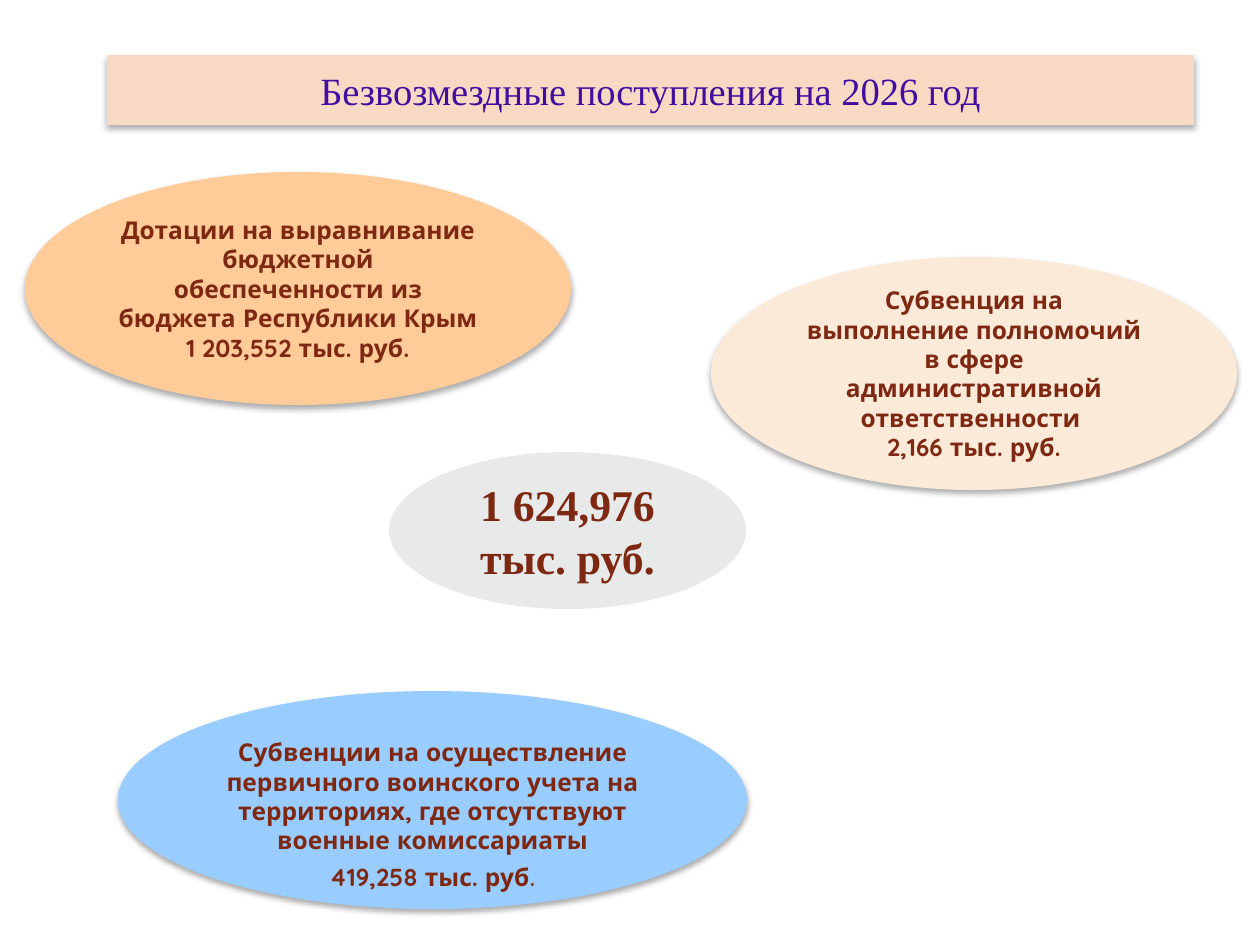
from lxml import etree
from pptx import Presentation
from pptx import util as u
from pptx.dml.color import RGBColor
from pptx.enum import shapes, text
from pptx.oxml.ns import qn

PX = 914400 / 126
BROWN = "7E2812"
OVAL = shapes.MSO_SHAPE.OVAL


def px(n):
    return u.Emu(round(n * PX))


def color(hex_value):
    return RGBColor.from_string(hex_value)


def add_shadow(sp):
    effects = sp._element.spPr.find(qn("a:effectLst"))
    shadow = etree.SubElement(effects, qn("a:outerShdw"), blurRad=str(u.Pt(3.5)),
                              dist=str(u.Pt(2.2)), dir="5400000", rotWithShape="0")
    black = etree.SubElement(shadow, qn("a:srgbClr"), val="000000")
    etree.SubElement(black, qn("a:alpha"), val="32000")


def add_block(s, kind, box, fill, lines, size, font, ink, bold=True, shadow=True):
    """Filled shape with centred lines of text."""
    sp = s.shapes.add_shape(kind, *map(px, box))
    sp.shadow.inherit = False
    sp.fill.solid()
    sp.fill.fore_color.rgb = color(fill)
    sp.line.fill.background()
    if shadow:
        add_shadow(sp)
    tf = sp.text_frame
    tf.word_wrap = True
    tf.vertical_anchor = text.MSO_ANCHOR.MIDDLE
    tf.text = "\n".join(lines)
    for p in tf.paragraphs:
        p.alignment = text.PP_ALIGN.CENTER
        for r in p.runs:
            style_run(r, size, font, ink, bold)
    return sp


def style_run(r, size, font, ink, bold):
    r.font.size = u.Pt(size)
    r.font.name = font
    r.font.bold = bold
    r.font.color.rgb = color(ink)


def title_bar(s, box):
    add_block(s, shapes.MSO_SHAPE.RECTANGLE, box, "F8D9C4",
              ["Безвозмездные поступления на 2026 год"],
              22, "Times New Roman", "420EA0", bold=False)


def total_oval(s, box):
    add_block(s, OVAL, box, "E8EAEA", ["1 624,976 тыс. руб."],
              25, "Times New Roman", BROWN, shadow=False)


def grant_oval(s, box, fill, name, amount):
    return add_block(s, OVAL, box, fill, [name, amount], 14, "Quicksand", BROWN)


def military_oval(s, box):
    sp = grant_oval(s, box, "99CCFF",
                    "Субвенции на осуществление первичного воинского учета на "
                    "территориях, где отсутствуют военные комиссариаты",
                    "419,258 тыс. руб")
    # Text sits one line below the middle; the closing stop is larger
    sp.text_frame.margin_top = px(36)
    stop = sp.text_frame.paragraphs[-1].add_run()
    stop.text = "."
    style_run(stop, 18, "Quicksand", BROWN, False)


def main():
    prs = Presentation()
    prs.slide_width, prs.slide_height = px(1260), px(945)
    s = prs.slides.add_slide(prs.slide_layouts[6])

    # Heading and total
    title_bar(s, (107, 55, 1087, 70))
    total_oval(s, (389, 452, 357, 157))

    # Sources of the total
    military_oval(s, (118, 691, 629, 218))
    grant_oval(s, (25, 172, 546, 233), "FFCC99",
               "Дотации на выравнивание бюджетной обеспеченности из "
               "бюджета Республики Крым ", "1 203,552 тыс. руб.")
    grant_oval(s, (711, 257, 526, 233), "FBEAD8",
               "Субвенция на выполнение полномочий в сфере "
               "административной ответственности ", "2,166 тыс. руб.")

    prs.save("out.pptx")


if __name__ == "__main__":
    main()
